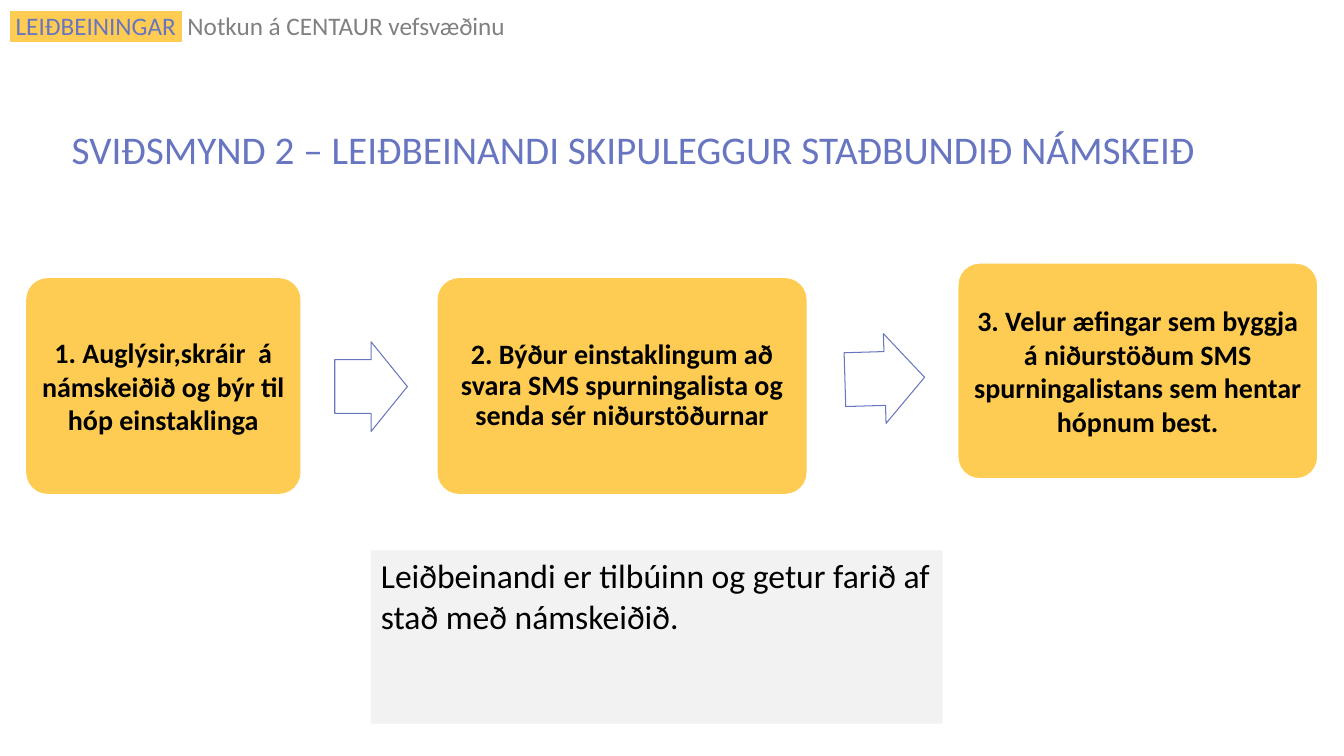
"""Build the slide that shows the three steps of planning an on-site course."""
from dataclasses import dataclass

from lxml.etree import SubElement
from pptx import Presentation
from pptx.dml.color import RGBColor
from pptx.enum.shapes import MSO_SHAPE
from pptx.enum.text import MSO_ANCHOR, MSO_AUTO_SIZE, PP_ALIGN
from pptx.oxml.ns import qn
from pptx.util import Inches, Pt


@dataclass(frozen=True)
class Theme:
    font: str = "Calibri"
    accent: RGBColor = RGBColor(0x68, 0x75, 0xC1)
    yellow: RGBColor = RGBColor(0xFF, 0xCC, 0x53)
    panel: RGBColor = RGBColor(0xF2, 0xF2, 0xF2)
    grey: RGBColor = RGBColor(0x80, 0x80, 0x80)
    black: RGBColor = RGBColor(0, 0, 0)
    white: RGBColor = RGBColor(0xFF, 0xFF, 0xFF)
    header: Pt = Pt(18)
    step: Pt = Pt(20)
    note: Pt = Pt(24)
    title: Pt = Pt(28)


class SlideBuilder:
    def __init__(self, prs, theme):
        self.theme = theme
        self.s = prs.slides.add_slide(prs.slide_layouts[5])

    def apply(self, target, values):
        for name, value in values.items():
            setattr(target, name, value)

    def run(self, p, text, size, color, bold=False, highlight=None):
        r = p.add_run()
        r.text = text
        self.apply(r.font, {"name": self.theme.font, "size": size, "bold": bold})
        r.font.color.rgb = color
        if highlight is not None:
            rpr = r.font._element
            mark = SubElement(rpr, qn("a:highlight"))
            SubElement(mark, qn("a:srgbClr"), val=str(highlight))
            rpr.find(qn("a:latin")).addprevious(mark)

    def place(self, sp, box):
        names = ("left", "top", "width", "height")
        self.apply(sp, dict(zip(names, map(Inches, box))))

    def title(self, box, text):
        sp = self.s.shapes.title
        self.place(sp, box)
        tf = sp.text_frame
        self.apply(tf, {"word_wrap": True, "auto_size": MSO_AUTO_SIZE.NONE,
                        "vertical_anchor": MSO_ANCHOR.MIDDLE})
        p = tf.paragraphs[0]
        self.apply(p, {"alignment": PP_ALIGN.LEFT, "line_spacing": 0.9})
        self.run(p, text, self.theme.title, self.theme.accent)

    def header(self, box, label, text):
        t = self.theme
        tf = self.s.shapes.add_textbox(*map(Inches, box)).text_frame
        self.apply(tf, {"word_wrap": True, "auto_size": MSO_AUTO_SIZE.SHAPE_TO_FIT_TEXT})
        p = tf.paragraphs[0]
        p.line_spacing = 0.8
        for part, color, highlight in ((" ", t.white, t.yellow), (label, t.accent, t.yellow),
                                       (" ", t.grey, t.yellow), (text, t.grey, None)):
            self.run(p, part, t.header, color, highlight=highlight)

    def shape(self, kind, box, fill=None, line=None, adjustments=()):
        sp = self.s.shapes.add_shape(kind, *map(Inches, box))
        sp.shadow.inherit = False
        for i, value in enumerate(adjustments):
            sp.adjustments[i] = value
        for part, color in ((sp.fill, fill), (sp.line.fill, line)):
            if color is None:
                part.background()
            else:
                part.solid()
                part.fore_color.rgb = color
        return sp

    def step(self, box, text, spacing, line=None):
        sp = self.shape(MSO_SHAPE.ROUNDED_RECTANGLE, box, self.theme.yellow, line, (0.1,))
        if line is not None:
            sp.line.width = Pt(1)
        tf = sp.text_frame
        sides = ("left", "top", "right", "bottom")
        self.apply(tf, {f"margin_{side}": Inches(0.08) for side in sides})
        self.apply(tf, {"word_wrap": True, "vertical_anchor": MSO_ANCHOR.MIDDLE})
        p = tf.paragraphs[0]
        self.apply(p, {"alignment": PP_ALIGN.CENTER, "line_spacing": spacing})
        self.run(p, text, self.theme.step, self.theme.black, bold=True)

    def arrow(self, box, rotation):
        sp = self.shape(MSO_SHAPE.RIGHT_ARROW, box, line=self.theme.accent,
                        adjustments=(0.6, 0.5))
        sp.line.width = Pt(0.75)
        sp.rotation = rotation

    def note(self, box, text):
        tf = self.shape(MSO_SHAPE.RECTANGLE, box, self.theme.panel).text_frame
        self.apply(tf, {"word_wrap": True, "vertical_anchor": MSO_ANCHOR.TOP})
        p = tf.paragraphs[0]
        self.apply(p, {"alignment": PP_ALIGN.LEFT, "space_after": Pt(6)})
        self.run(p, text, self.theme.note, self.theme.black)


def main():
    prs = Presentation()
    prs.slide_width, prs.slide_height = Inches(13.33), Inches(7.5)
    theme = Theme()
    b = SlideBuilder(prs, theme)
    b.header((0, 0.11, 9.52, 0.35), "LEIÐBEININGAR", " Notkun á CENTAUR vefsvæðinu")
    b.title((0.61, 1.18, 12.1, 0.66),
            "SVIÐSMYND 2 – LEIÐBEINANDI SKIPULEGGUR STAÐBUNDIÐ NÁMSKEIÐ")
    b.note((3.68, 5.46, 5.67, 1.72),
           "Leiðbeinandi er tilbúinn og getur farið af stað með námskeiðið.")
    steps = (
        ((0.26, 2.76, 2.72, 2.14), "1. Auglýsir,skráir  á námskeiðið og býr til hóp einstaklinga",
         1.0, None),
        ((4.34, 2.76, 3.66, 2.14), "2. Býður einstaklingum að svara SMS spurningalista "
         "og senda sér niðurstöðurnar", 0.9, None),
        ((9.5, 2.61, 3.57, 2.14), "3. Velur æfingar sem byggja á niðurstöðum SMS "
         "spurningalistans sem hentar hópnum best.", 1.0, theme.white),
    )
    for step in steps:
        b.step(*step)
    for box, rotation in (((3.32, 3.39, 0.72, 0.89), 0), ((8.38, 3.31, 0.79, 0.89), 358.3)):
        b.arrow(box, rotation)
    prs.save("out.pptx")


if __name__ == "__main__":
    main()
